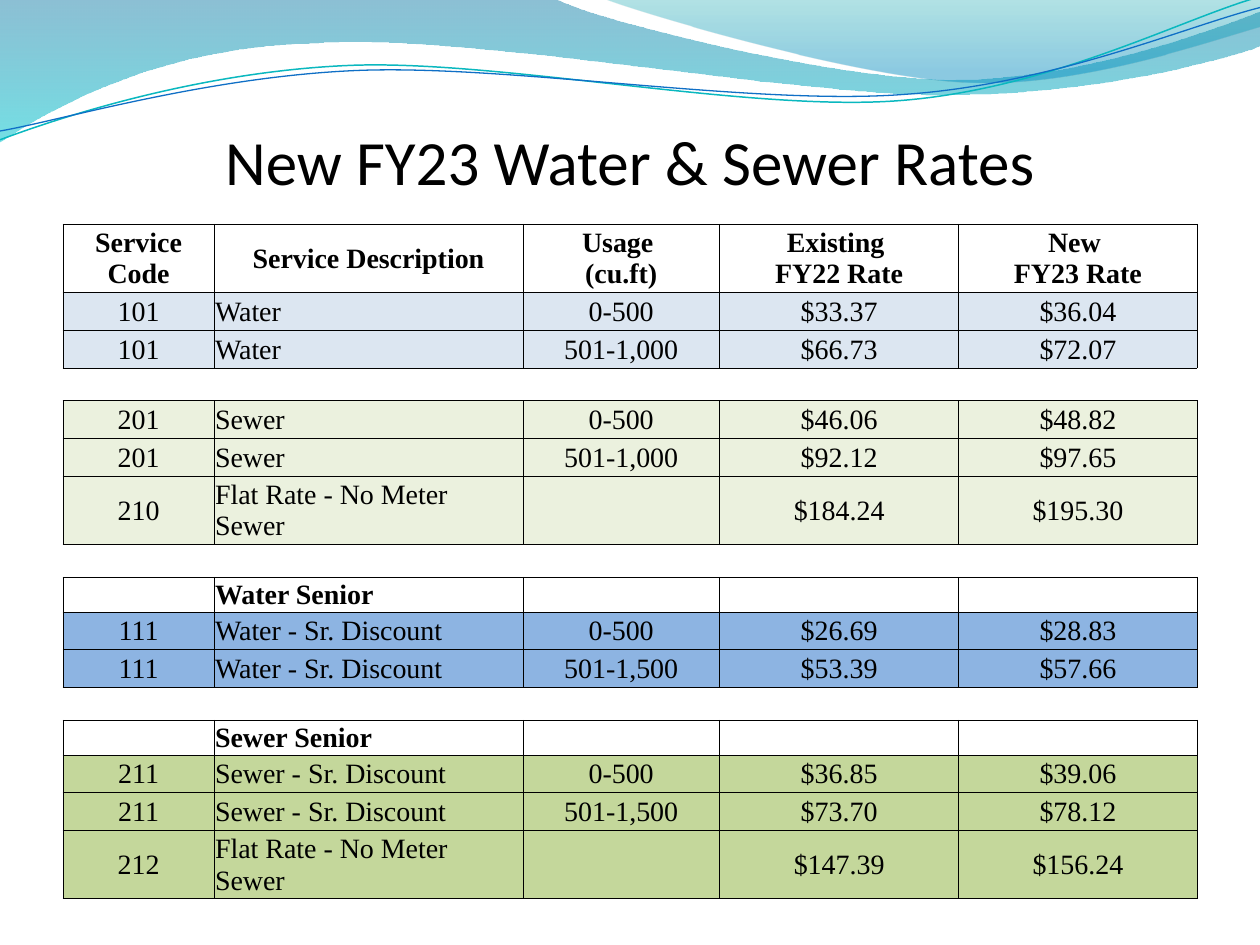
from lxml import etree
from pptx import Presentation
from pptx import util as u
from pptx.dml.color import RGBColor
from pptx.enum import text
from pptx.oxml.ns import qn

BLACK = RGBColor(0x00, 0x00, 0x00)
WATER = RGBColor(0xDC, 0xE6, 0xF1)
SEWER = RGBColor(0xEB, 0xF1, 0xDE)
WATER_SENIOR = RGBColor(0x8D, 0xB4, 0xE2)
SEWER_SENIOR = RGBColor(0xC4, 0xD7, 0x9B)
DEEP_BLUE = RGBColor(0x00, 0x74, 0xA1)
AQUA = RGBColor(0x00, 0xC6, 0xCF)
TEAL = RGBColor(0x00, 0xA1, 0xA9)
SKY = RGBColor(0x00, 0x8B, 0xBF)
LINE_TEAL = RGBColor(0x0A, 0xB8, 0xBF)
LINE_BLUE = RGBColor(0x0F, 0x6F, 0xC6)
NO_STYLE = "{2D5ABB26-0587-4C30-8999-92F81FD0307C}"

# Wave outlines: a point of two numbers is a corner, six numbers are a curve
LEFT_WAVE = [(0, 0), (4.4, -0.01), (4.76, 0.17, 6.64, 0.63, 7.58, 0.63),
             (8.53, 0.63, 9.58, 0.26, 10, 0.09), (10.01, 0.36),
             (9.83, 0.44, 8.7, 0.76, 7.46, 0.75), (6.22, 0.75, 3.82, 0.28, 2.57, 0.34),
             (1.29, 0.36, 0.46, 0.83, -0.01, 1.13)]
RIGHT_WAVE = [(4.79, -0.01), (5.09, 0.11, 6.82, 0.62, 7.69, 0.65),
              (8.56, 0.69, 9.61, 0.32, 10, 0.21), (10, 0)]
TEAL_LINE = [(0, 1.11), (0.48, 0.93, 1.58, 0.57, 2.77, 0.52),
             (3.95, 0.47, 5.93, 0.89, 7.13, 0.8), (8.33, 0.71, 9.38, 0.15, 9.98, -0.02)]
BLUE_LINE = [(0, 1.04), (0.47, 0.96, 1.64, 0.61, 2.83, 0.56),
             (4.03, 0.51, 5.97, 0.84, 7.17, 0.75), (8.36, 0.67, 9.41, 0.21, 10, 0.06)]

# Table rows: height, fill, bold, five texts (None is a gap row)
HEADER = ["Service Code", "Service Description", "Usage \n(cu.ft)",
          "Existing \nFY22 Rate", "New \nFY23 Rate"]
GAP = (0.26, None, False, None)
FLAT = "Flat Rate - No Meter Sewer"
ROWS = [
    (0.51, None, True, HEADER),
    (0.3, WATER, False, ["101", "Water", "0-500", "$33.37", "$36.04"]),
    (0.3, WATER, False, ["101", "Water", "501-1,000", "$66.73", "$72.07"]),
    GAP,
    (0.3, SEWER, False, ["201", "Sewer", "0-500", "$46.06", "$48.82"]),
    (0.3, SEWER, False, ["201", "Sewer", "501-1,000", "$92.12", "$97.65"]),
    (0.51, SEWER, False, ["210", FLAT, "", "$184.24", "$195.30"]),
    GAP,
    (0.26, None, True, ["", "Water Senior", "", "", ""]),
    (0.3, WATER_SENIOR, False, ["111", "Water - Sr. Discount", "0-500", "$26.69", "$28.83"]),
    (0.3, WATER_SENIOR, False, ["111", "Water - Sr. Discount", "501-1,500", "$53.39", "$57.66"]),
    GAP,
    (0.26, None, True, ["", "Sewer Senior", "", "", ""]),
    (0.3, SEWER_SENIOR, False, ["211", "Sewer - Sr. Discount", "0-500", "$36.85", "$39.06"]),
    (0.3, SEWER_SENIOR, False, ["211", "Sewer - Sr. Discount", "501-1,500", "$73.70", "$78.12"]),
    (0.51, SEWER_SENIOR, False, ["212", FLAT, "", "$147.39", "$156.24"]),
    GAP,
]
COLUMN_WIDTHS = [1.2, 2.45, 1.56, 1.9, 1.89]


def add_outline(slide, left, top, outline, closed):
    """Build a freeform, then join the three points of each curve into a Bezier."""
    points = [(u.Inches(left + part[i]), u.Inches(top + part[i + 1]))
              for part in outline for i in range(0, len(part), 2)]
    builder = slide.shapes.build_freeform(*points[0], scale=1.0)
    builder.add_line_segments(points[1:], close=closed)
    shape = builder.convert_to_shape()
    shape.shadow.inherit = False
    segments = iter(list(shape._element.iter(qn("a:lnTo"))))
    for part in outline[1:]:
        segment = next(segments)
        if len(part) == 6:
            curve = etree.Element(qn("a:cubicBezTo"))
            segment.addprevious(curve)
            for piece in (segment, next(segments), next(segments)):
                curve.append(piece[0])
                piece.getparent().remove(piece)
    return shape


def add_waves(slide, left, top):
    # Translucent gradient bands
    bands = [(LEFT_WAVE, [(0, DEEP_BLUE, 45), (1, AQUA, 55)]),
             (RIGHT_WAVE, [(0, TEAL, 30), (0.8, SKY, 45)])]
    for outline, stops in bands:
        shape = add_outline(slide, left, top, outline, True)
        shape.line.fill.background()
        shape.fill.gradient()
        shape.fill.gradient_angle = 270
        for stop, (position, color, _) in zip(shape.fill.gradient_stops, stops):
            stop.position = position
            stop.color.rgb = color
        colors = shape._element.spPr.find(qn("a:gradFill")).iter(qn("a:srgbClr"))
        for element, (_, _, opacity) in zip(colors, stops):
            etree.SubElement(element, qn("a:alpha"), val=str(opacity * 1000))
    # Thin lines
    for outline, color, width in [(TEAL_LINE, LINE_TEAL, 0.85), (BLUE_LINE, LINE_BLUE, 0.75)]:
        shape = add_outline(slide, left, top, outline, False)
        shape.fill.background()
        shape.line.color.rgb = color
        shape.line.width = u.Pt(width)


def add_run(paragraph, content, font_name, size, bold=False):
    run = paragraph.add_run()
    run.text = content
    run.font.name = font_name
    run.font.size = u.Pt(size)
    run.font.bold = bold
    run.font.color.rgb = BLACK


def add_title(slide, left, top, width, height):
    box = slide.shapes.add_textbox(*map(u.Inches, (left, top, width, height)))
    box.text_frame.word_wrap = True
    paragraph = box.text_frame.paragraphs[0]
    paragraph.alignment = text.PP_ALIGN.CENTER
    add_run(paragraph, "New FY23 Water & Sewer Rates", "Calibri", 36)


def set_borders(cell, widths):
    """Draw the sides named in widths (points); leave the others open."""
    properties = cell._tc.get_or_add_tcPr()
    for index, side in enumerate("LRTB"):
        width = widths.get(side, 0)
        line = etree.Element(qn("a:ln" + side), w=str(u.Pt(width)))
        if width:
            fill = etree.SubElement(line, qn("a:solidFill"))
            etree.SubElement(fill, qn("a:srgbClr"), val=str(BLACK))
        else:
            etree.SubElement(line, qn("a:noFill"))
        properties.insert(index, line)


def fill_cell(cell, content, centered, bold):
    cell.vertical_anchor = text.MSO_ANCHOR.MIDDLE
    cell.margin_left = cell.margin_right = cell.margin_top = u.Pt(0.5)
    cell.margin_bottom = u.Pt(0.1)  # a zero margin falls back to the default
    paragraph = cell.text_frame.paragraphs[0]
    if not content:
        etree.SubElement(paragraph._p, qn("a:endParaRPr"), sz="1200")
        return
    paragraph.alignment = text.PP_ALIGN.CENTER if centered else text.PP_ALIGN.LEFT
    for index, line in enumerate(content.split("\n")):
        if index:
            paragraph.add_line_break()
        add_run(paragraph, line, "Times New Roman", 16, bold)


def add_rate_table(slide, left, top):
    width, height = sum(COLUMN_WIDTHS), sum(row[0] for row in ROWS)
    frame = slide.shapes.add_table(len(ROWS), len(COLUMN_WIDTHS),
                                   *map(u.Inches, (left, top, width, height)))
    table = frame.table
    table.first_row = table.horz_banding = False
    next(frame._element.iter(qn("a:tableStyleId"))).text = NO_STYLE
    for column, column_width in zip(table.columns, COLUMN_WIDTHS):
        column.width = u.Inches(column_width)
    last = len(ROWS) - 1
    for row, (row_height, color, bold, contents) in enumerate(ROWS):
        table.rows[row].height = u.Inches(row_height)
        # Gap rows have no sides; the header has a heavier rule below it
        borders = dict.fromkeys("LRTB" if contents else "T" if row == last else "TB", 0.5)
        if row < 2:
            borders["B" if row == 0 else "T"] = 1
        for column, content in enumerate(contents or [""] * len(COLUMN_WIDTHS)):
            cell = table.cell(row, column)
            if color is None:
                cell.fill.background()
            else:
                cell.fill.solid()
                cell.fill.fore_color.rgb = color
            fill_cell(cell, content, column != 1 or row == 0, bold)
            set_borders(cell, borders)


def main():
    presentation = Presentation()
    presentation.slide_width = u.Inches(10)
    presentation.slide_height = u.Inches(7.5)
    slide = presentation.slides.add_slide(presentation.slide_layouts[6])
    add_waves(slide, 0, 0)
    add_title(slide, 0.5, 0.92, 9, 0.6)
    add_rate_table(slide, 0.5, 1.78)
    presentation.save("out.pptx")


if __name__ == "__main__":
    main()
